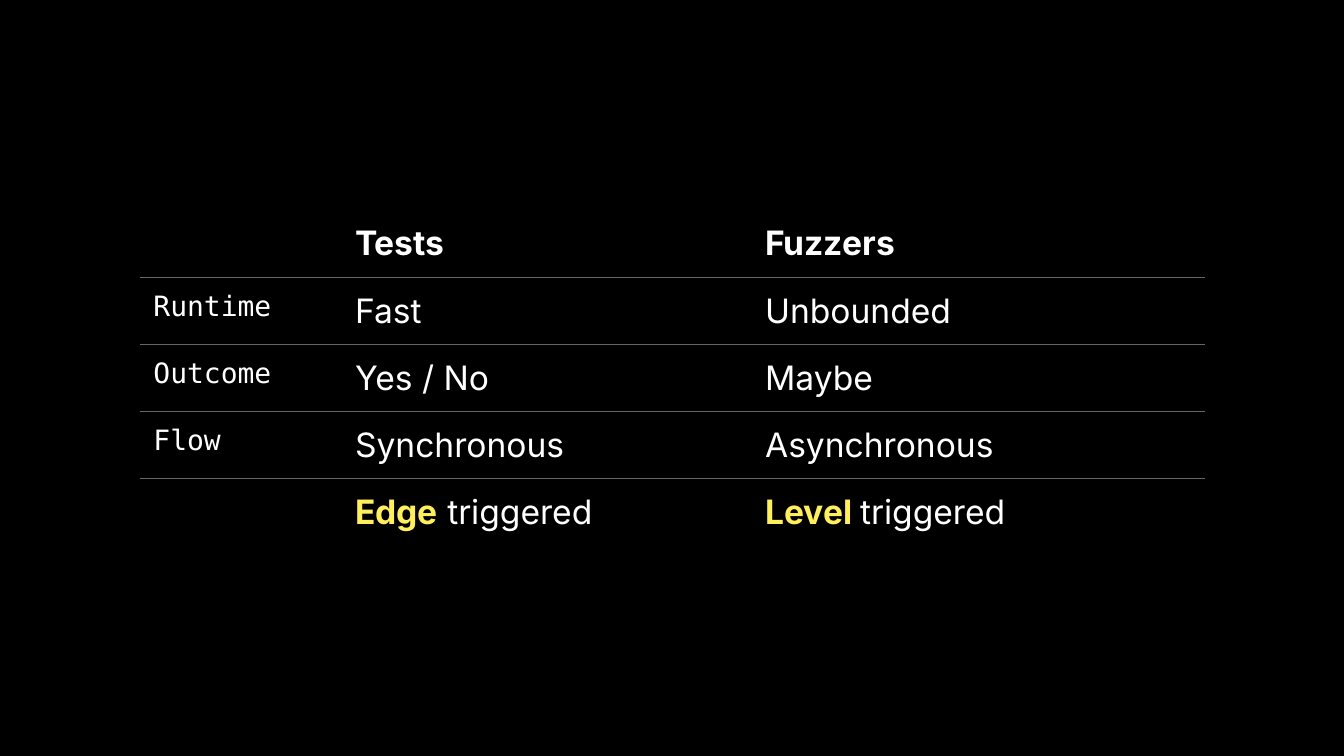
from lxml import etree
from pptx import Presentation
from pptx.dml.color import RGBColor
from pptx.oxml.ns import qn
from pptx.util import Cm, Pt

BLACK = RGBColor(0x00, 0x00, 0x00)
WHITE = RGBColor(0xFF, 0xFF, 0xFF)
YELLOW = RGBColor(0xFF, 0xEF, 0x5C)
GRAY = RGBColor(0x66, 0x66, 0x66)

BODY = {"name": "Inter", "size": Pt(18), "bold": False}
BOLD = {"name": "Inter", "size": Pt(18), "bold": True}
LABEL = {"name": "DejaVu Sans Mono", "size": Pt(15), "bold": False}
MARGINS = {side: Cm(0.25) for side in
           ("margin_left", "margin_right", "margin_top", "margin_bottom")}

COLS = [3.81, 7.75, 8.56]
ROW = 1.07
ROWS = [
    [[], [("Tests", BOLD, WHITE)], [("Fuzzers", BOLD, WHITE)]],
    *[[[(label, LABEL, WHITE)], [(test, BODY, WHITE)], [(fuzzer, BODY, WHITE)]]
      for label, test, fuzzer in [
          ("Runtime", "Fast", "Unbounded"),
          ("Outcome", "Yes / No", "Maybe"),
          ("Flow", "Synchronous", "Asynchronous")]],
    [[],
     [("Edge", BOLD, YELLOW), (" triggered", BODY, WHITE)],
     [("Level ", BOLD, YELLOW), ("triggered", BODY, WHITE)]],
]


def set_borders(cell, visible):
    tcPr = cell._tc.get_or_add_tcPr()
    for i, side in enumerate(("lnL", "lnR", "lnT", "lnB")):
        ln = etree.Element(qn(f"a:{side}"), w=str(Pt(0.75)))
        if side in visible:
            fill = etree.SubElement(ln, qn("a:solidFill"))
            etree.SubElement(fill, qn("a:srgbClr"), val=str(GRAY))
        else:
            etree.SubElement(ln, qn("a:noFill"))
        tcPr.insert(i, ln)


prs = Presentation()
prs.slide_width, prs.slide_height = Cm(25.4), Cm(14.29)
s = prs.slides.add_slide(prs.slide_layouts[6])
s.background.fill.solid()
s.background.fill.fore_color.rgb = BLACK

table = s.shapes.add_table(len(ROWS), len(COLS), Cm(2.65), Cm(3.97),
                           Cm(sum(COLS)), Cm(ROW * len(ROWS))).table
table.first_row = table.horz_banding = False
for col, width in zip(table.columns, COLS):
    col.width = Cm(width)

for i, row in enumerate(ROWS):
    table.rows[i].height = Cm(ROW)
    lines = {"lnT"} if i > 0 else set()
    if i < len(ROWS) - 1:
        lines.add("lnB")
    for j, runs in enumerate(row):
        cell = table.cell(i, j)
        cell.fill.background()
        for key, value in MARGINS.items():
            setattr(cell, key, value)
        set_borders(cell, lines)
        p = cell.text_frame.paragraphs[0]
        for text, fmt, color in runs:
            r = p.add_run()
            r.text = text
            r.font.color.rgb = color
            for key, value in fmt.items():
                setattr(r.font, key, value)

prs.save("out.pptx")
